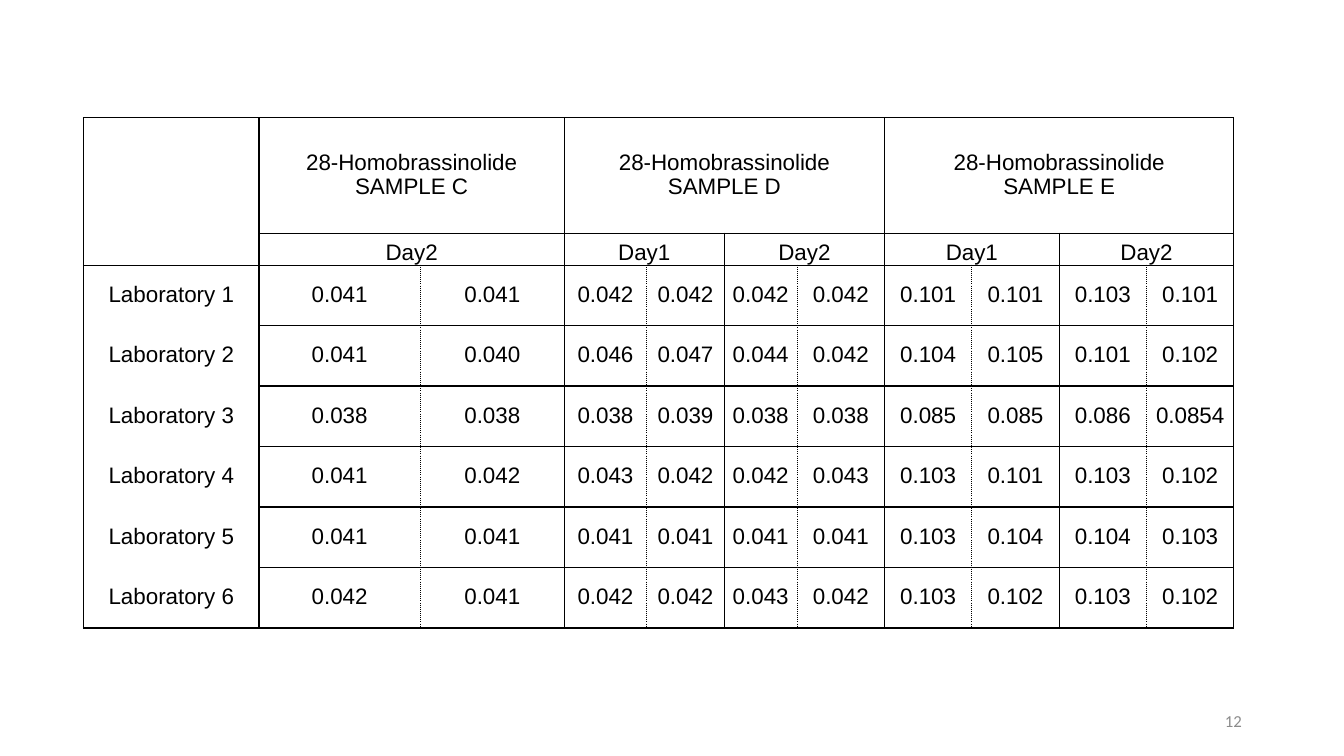
from dataclasses import dataclass

from lxml.etree import SubElement
from pptx import Presentation
from pptx.dml.color import RGBColor
from pptx.enum.text import MSO_ANCHOR, PP_ALIGN
from pptx.oxml.ns import qn
from pptx.util import Pt


@dataclass(frozen=True)
class Theme:
    ink: str = "000000"
    muted: str = "8C8C8C"
    table_font: str = "Arial"
    number_font: str = "Calibri"
    table_size: int = 16
    number_size: int = 12
    border: int = 1


theme = Theme()


def write(frame, text, font=theme.table_font, size=theme.table_size,
          color=theme.ink, align=PP_ALIGN.CENTER, spacing=0.93):
    for index, line in enumerate(text.split("\n")):
        paragraph = frame.add_paragraph() if index else frame.paragraphs[0]
        paragraph.alignment = align
        paragraph.line_spacing = spacing
        run = paragraph.add_run()
        run.text = line
        run.font.name = font
        run.font.size = Pt(size)
        run.font.color.rgb = RGBColor.from_string(color)


def draw_borders(cell, left="solid", right="solid", top="solid", bottom="solid"):
    properties = cell._tc.get_or_add_tcPr()
    edges = {"a:lnL": left, "a:lnR": right, "a:lnT": top, "a:lnB": bottom}
    for position, (tag, style) in enumerate(edges.items()):
        line = SubElement(properties, qn(tag), w=str(Pt(theme.border)))
        properties.insert(position, line)
        if style:
            fill = SubElement(line, qn("a:solidFill"))
            SubElement(fill, qn("a:srgbClr"), val=theme.ink)
            SubElement(line, qn("a:prstDash"), val=style)
        else:
            SubElement(line, qn("a:noFill"))


presentation = Presentation()
presentation.slide_width = Pt(960)
presentation.slide_height = Pt(540)
slide = presentation.slides.add_slide(presentation.slide_layouts[6])

# Content: sample groups, days and paired readings
samples = [("C", ["Day2"]), ("D", ["Day1", "Day2"]), ("E", ["Day1", "Day2"])]
readings = [
    "0.041 0.041 0.042 0.042 0.042 0.042 0.101 0.101 0.103 0.101",
    "0.041 0.040 0.046 0.047 0.044 0.042 0.104 0.105 0.101 0.102",
    "0.038 0.038 0.038 0.039 0.038 0.038 0.085 0.085 0.086 0.0854",
    "0.041 0.042 0.043 0.042 0.042 0.043 0.103 0.101 0.103 0.102",
    "0.041 0.041 0.041 0.041 0.041 0.041 0.103 0.104 0.104 0.103",
    "0.042 0.041 0.042 0.042 0.043 0.042 0.103 0.102 0.103 0.102",
]

# Table grid
column_widths = [125.3, 115.3, 102.8, 58.9, 55.4, 52.1] + [62.4] * 5
row_heights = [82.4, 22.8] + [43.2] * len(readings)
results = slide.shapes.add_table(
    len(row_heights), len(column_widths), Pt(59.7), Pt(84.2),
    Pt(sum(column_widths)), Pt(sum(row_heights))).table
results.first_row = results.horz_banding = False
for column, width in zip(results.columns, column_widths):
    column.width = Pt(width)
for row, height in zip(results.rows, row_heights):
    row.height = Pt(height)
for cell in results.iter_cells():
    cell.fill.background()
    cell.vertical_anchor = MSO_ANCHOR.MIDDLE
    cell.margin_left = cell.margin_right = Pt(3.6)
    cell.margin_top = cell.margin_bottom = 0

# Header: blank corner, samples, then days
corner = results.cell(0, 0)
corner.merge(results.cell(1, 0))
draw_borders(corner)
start = 1
for letter, days in samples:
    sample = results.cell(0, start)
    sample.merge(results.cell(0, start + 2 * len(days) - 1))
    write(sample.text_frame, f"28-Homobrassinolide\nSAMPLE {letter}")
    draw_borders(sample)
    for label in days:
        day = results.cell(1, start)
        day.merge(results.cell(1, start + 1))
        day.vertical_anchor = MSO_ANCHOR.BOTTOM
        write(day.text_frame, label)
        draw_borders(day)
        start += 2

# Laboratory rows: a dotted line parts the two readings of each day
for number, values in enumerate(readings, start=1):
    laboratory = results.cell(number + 1, 0)
    write(laboratory.text_frame, f"Laboratory {number}")
    draw_borders(laboratory, top="solid" if number == 1 else None,
                 bottom="solid" if number == len(readings) else None)
    for place, value in enumerate(values.split(), start=1):
        reading = results.cell(number + 1, place)
        write(reading.text_frame, value)
        inner_edge = "right" if place % 2 else "left"
        draw_borders(reading, **{inner_edge: "sysDot"})

# Slide number
page_number = slide.shapes.add_textbox(Pt(678.2), Pt(500.4), Pt(216), Pt(28.8)).text_frame
page_number.word_wrap = True
page_number.vertical_anchor = MSO_ANCHOR.MIDDLE
write(page_number, "12", font=theme.number_font, size=theme.number_size,
      color=theme.muted, align=PP_ALIGN.RIGHT, spacing=1.0)

presentation.save("out.pptx")
